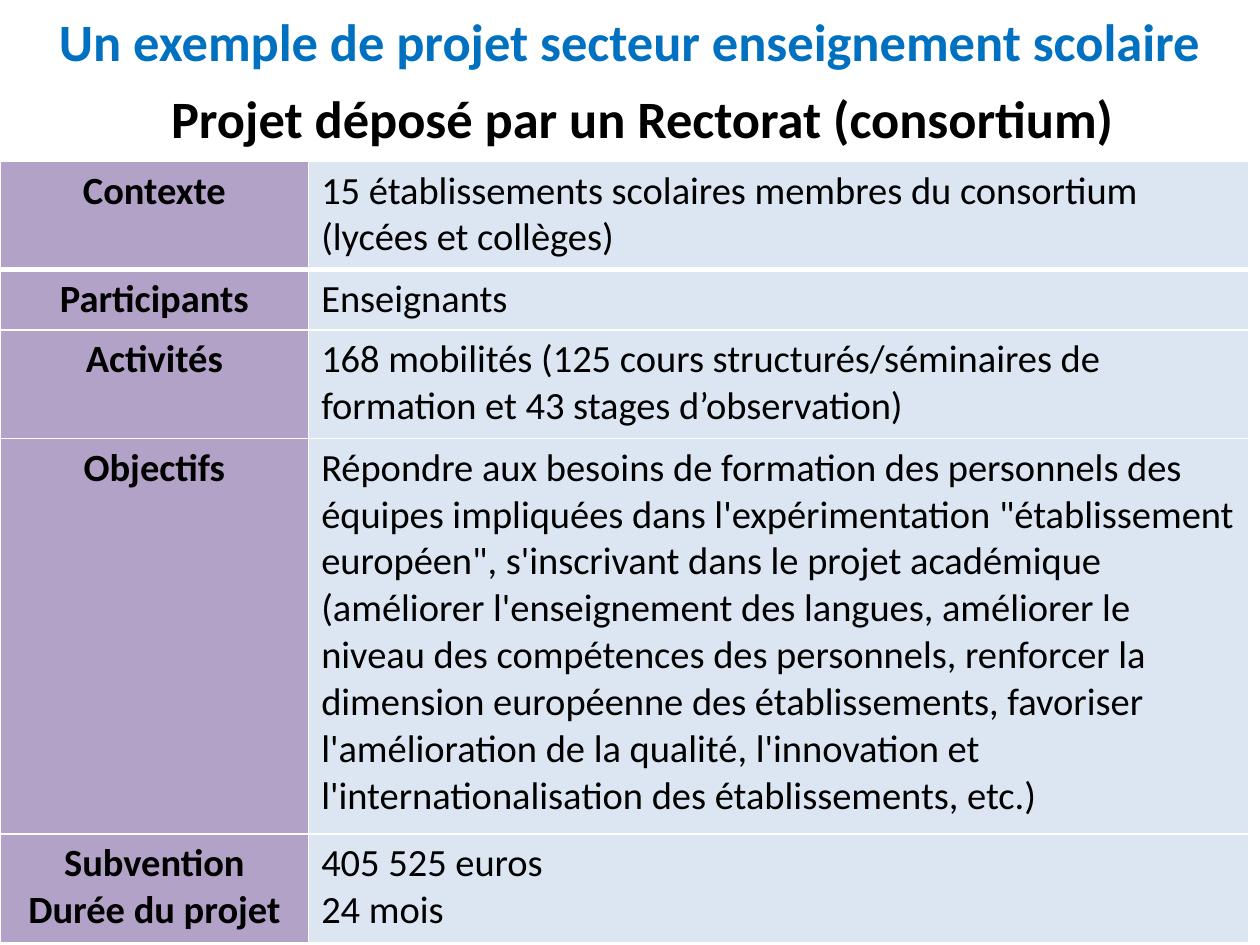
from lxml.etree import SubElement
from pptx import Presentation
from pptx.dml.color import RGBColor as RGB
from pptx.enum.text import PP_ALIGN as Align
from pptx.oxml.ns import qn
from pptx.util import Inches, Pt

COLORS = {"black": "000000", "blue": "0070C0", "white": "FFFFFF",
          "label": "B3A2C7", "detail": "DCE6F2"}
COLS = [2.45, 7.46]
HEIGHTS = [0.86, 0.48, 0.86, 3.14, 0.86]
ROWS = [
    ("Contexte",
     "15 établissements scolaires membres du consortium (lycées et collèges)"),
    ("Participants", "Enseignants"),
    ("Activités",
     "168 mobilités (125 cours structurés/séminaires de formation "
     "et 43 stages d’observation)"),
    ("Objectifs",
     "Répondre aux besoins de formation des personnels des équipes impliquées "
     "dans l'expérimentation \"établissement européen\", s'inscrivant dans le "
     "projet académique (améliorer l'enseignement des langues, améliorer le "
     "niveau des compétences des personnels, renforcer la dimension européenne "
     "des établissements, favoriser l'amélioration de la qualité, l'innovation "
     "et l'internationalisation des établissements, etc.)"),
    ("Subvention\nDurée du projet", "405 525 euros\n24 mois"),
]


def write(frame, text, size=22, color="black", bold=False, align=Align.LEFT):
    frame.word_wrap = True
    frame.text = text
    for para in frame.paragraphs:
        para.alignment = align
        for run in para.runs:
            font = run.font
            font.name, font.size, font.bold = "Calibri", Pt(size), bold
            font.color.rgb = RGB.from_string(COLORS[color])


def add_title(slide, text, box, color):
    shape = slide.shapes.add_textbox(*map(Inches, box))
    write(shape.text_frame, text, size=30, color=color, bold=True,
          align=Align.CENTER)


def set_borders(cell, top, bottom):
    props = cell._tc.get_or_add_tcPr()
    for side, width in (("L", 1), ("R", 1), ("T", top), ("B", bottom)):
        line = SubElement(props, qn(f"a:ln{side}"), w=str(Pt(width)))
        fill = SubElement(line, qn("a:solidFill"))
        SubElement(fill, qn("a:srgbClr"), val=COLORS["white"])


def add_facts(slide, box):
    """Table of project facts, with a thick rule under its first row."""
    table = slide.shapes.add_table(len(ROWS), len(COLS),
                                   *map(Inches, box)).table
    for col, width in zip(table.columns, COLS):
        col.width = Inches(width)
    for i, (texts, height) in enumerate(zip(ROWS, HEIGHTS)):
        table.rows[i].height = Inches(height)
        for j, text in enumerate(texts):
            cell = table.cell(i, j)
            set_borders(cell, top=3 if i == 1 else 1, bottom=3 if i == 0 else 1)
            cell.fill.solid()
            fill = COLORS["detail" if j else "label"]
            cell.fill.fore_color.rgb = RGB.from_string(fill)
            write(cell.text_frame, text, bold=j == 0,
                  align=Align.LEFT if j else Align.CENTER)


def main():
    prs = Presentation()
    prs.slide_width, prs.slide_height = Inches(10), Inches(7.5)
    slide = prs.slides.add_slide(prs.slide_layouts[6])
    add_title(slide, "Projet déposé par un Rectorat (consortium)",
              (0.74, 0.63, 8.72, 1.31), "black")
    add_title(slide, "Un exemple de projet secteur enseignement scolaire",
              (0, 0.02, 10, 0.61), "blue")
    add_facts(slide, (0, 1.28, sum(COLS), sum(HEIGHTS)))
    prs.save("out.pptx")


if __name__ == "__main__":
    main()
